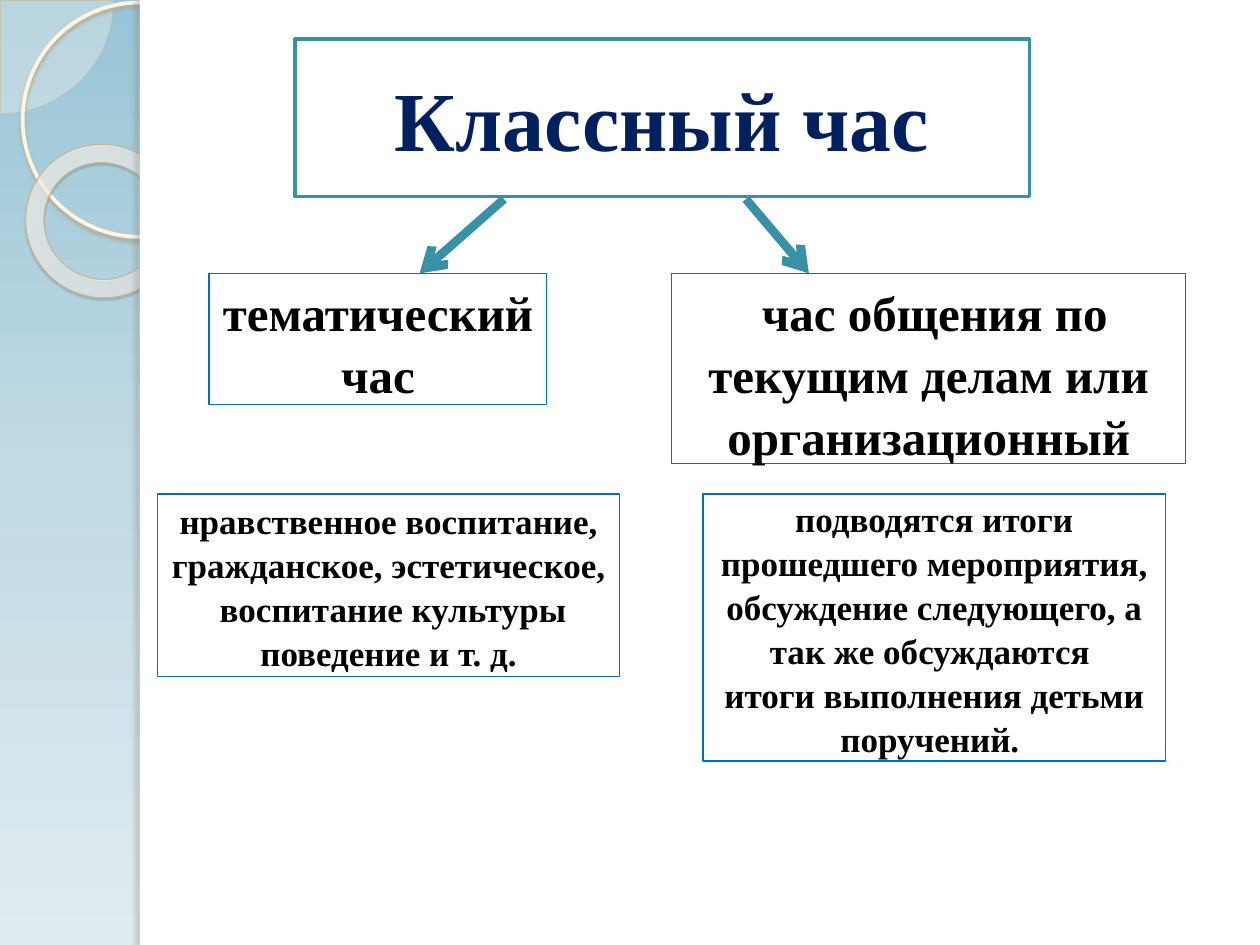
from lxml import etree
from pptx import Presentation
from pptx import util as u
from pptx.dml.color import RGBColor
from pptx.enum import shapes, text
from pptx.oxml import parse_xml
from pptx.oxml.ns import qn

NS = 'xmlns:a="http://schemas.openxmlformats.org/drawingml/2006/main"'
FONT = "Times New Roman"
COLORS = {
    "teal": "3891A7", "navy": "002060", "blue": "0070C0", "black": "000000",
    "white": "FFFFFF", "cream": "FEFAF4", "ring": "FFF5DE",
    "pie line": "D3C39F", "donut line": "C7B893",
}
BACKGROUND_STOPS = [(0, "98C5D6", 100), (50, "C1DAE4", 100), (100, "E1ECF1", 100)]
DONUT_STOPS = [(0, "FFFCF6", 70), (70, "FFFEFB", 55), (100, "F0D28E", 60)]
SIDEBAR = 1.11
KINDS = shapes.MSO_SHAPE


def rgb(name):
    return RGBColor.from_string(COLORS[name])


def gradient(stops, direction):
    """Return a gradient fill; each stop is position, colour, opacity in percent."""
    items = "".join(
        f'<a:gs pos="{position * 1000}"><a:srgbClr val="{color}">'
        f'<a:alpha val="{alpha * 1000}"/></a:srgbClr></a:gs>'
        for position, color, alpha in stops)
    return parse_xml(f'<a:gradFill {NS} rotWithShape="1"><a:gsLst>{items}</a:gsLst>'
                     f'{direction}</a:gradFill>')


def set_gradient(fill, parent, stops, direction):
    fill.gradient()
    old = next(parent.iter(qn("a:gradFill")))
    old.getparent().replace(old, gradient(stops, direction))


def set_shadow(shape, color, alpha, blur, distance, angle):
    effects = shape._element.spPr.find(qn("a:effectLst"))
    effects.append(parse_xml(
        f'<a:outerShdw {NS} blurRad="{u.Pt(blur)}" dist="{u.Pt(distance)}" '
        f'dir="{angle * 60000}" algn="tl" rotWithShape="0"><a:srgbClr val="{color}">'
        f'<a:alpha val="{alpha * 1000}"/></a:srgbClr></a:outerShdw>'))


def set_line(shape, color, width):
    shape.line.color.rgb = rgb(color)
    shape.line.width = u.Pt(width)


def add_figure(slide, kind, box, fill=None, line=None, shadow=None):
    shape = slide.shapes.add_shape(kind, *map(u.Inches, box))
    shape.shadow.inherit = False
    if fill:
        shape.fill.solid()
        shape.fill.fore_color.rgb = rgb(fill)
    else:
        shape.fill.background()
    if line:
        set_line(shape, *line)
    else:
        shape.line.fill.background()
    if shadow:
        set_shadow(shape, *shadow)
    return shape


def write(shape, paragraphs, size, color, anchor, spacing):
    frame = shape.text_frame
    frame.word_wrap = True
    frame.vertical_anchor = anchor
    frame.text = "\n".join(paragraphs)
    for paragraph in frame.paragraphs:
        paragraph.alignment = text.PP_ALIGN.CENTER
        paragraph.line_spacing = spacing
        for run in paragraph.runs:
            run.font.name = FONT
            run.font.size = u.Pt(size)
            run.font.bold = True
            run.font.color.rgb = rgb(color)


def add_box(slide, box, paragraphs, size, anchor=text.MSO_ANCHOR.TOP):
    shape = slide.shapes.add_textbox(*map(u.Inches, box))
    set_line(shape, "blue", 0.75)
    write(shape, paragraphs, size, "black", anchor, 1.05)


def add_arrow(slide, start, end):
    arrow = slide.shapes.add_connector(
        shapes.MSO_CONNECTOR.STRAIGHT, *map(u.Inches, (*start, *end)))
    set_line(arrow, "teal", 5)
    etree.SubElement(arrow.line._get_or_add_ln(), qn("a:tailEnd"), type="arrow")
    etree.SubElement(arrow._element.spPr, qn("a:effectLst"))


def add_sidebar(slide):
    fill = slide.background.fill
    set_gradient(fill, slide._element, BACKGROUND_STOPS, '<a:lin ang="5400000" scaled="0"/>')

    # Quarter disc in the corner
    pie = add_figure(slide, KINDS.PIE, (-0.89, -0.89, 1.79, 1.79), "cream", ("pie line", 0.25))
    pie.adjustments[0], pie.adjustments[1] = 0, 54
    color = pie._element.spPr.find(qn("a:solidFill"))[0]
    etree.SubElement(color, qn("a:alpha"), val="33000")

    # Rings
    add_figure(slide, KINDS.OVAL, (0.18, 0.02, 1.86, 1.86), line=("ring", 2.15),
               shadow=("B0A68F", 85, 2, 2, 90))
    donut = add_figure(slide, KINDS.DONUT, (0.2, 1.15, 1.23, 1.21),
                       line=("donut line", 0.58), shadow=("5A5444", 35, 1, 1.2, 75))
    donut.rotation = 38.6
    donut.adjustments[0] = 0.12
    set_gradient(donut.fill, donut._element, DONUT_STOPS,
                 '<a:path path="circle"><a:fillToRect l="-408000" t="-50000" '
                 'r="508000" b="150000"/></a:path>')

    # White page and its shaded edge
    add_figure(slide, KINDS.RECTANGLE, (SIDEBAR, 0, 10 - SIDEBAR, 7.5), "white")
    add_figure(slide, KINDS.RECTANGLE, (SIDEBAR, 0, 0.08, 7.5), "white",
               shadow=("736F63", 25, 3, 3, 180))


def add_title(slide, box, words):
    title = slide.shapes.title
    slide.shapes._spTree.append(title._element)  # above the page
    title.left, title.top, title.width, title.height = map(u.Inches, box)
    title.fill.solid()
    title.fill.fore_color.rgb = rgb("white")
    set_line(title, "teal", 2)
    write(title, [words], 48, "navy", text.MSO_ANCHOR.MIDDLE, 1)


def main():
    presentation = Presentation()
    presentation.slide_width, presentation.slide_height = u.Inches(10), u.Inches(7.5)
    slide = presentation.slides.add_slide(presentation.slide_layouts[5])
    add_sidebar(slide)
    add_title(slide, (2.34, 0.31, 5.83, 1.25), "Классный час")

    # Two kinds of class hour
    kinds_top, details_top, details_width = 2.17, 3.92, 3.67
    add_box(slide, (1.66, kinds_top, 2.68, 1.04), ["тематический час"], 28)
    add_box(slide, (5.33, kinds_top, 4.08, 1.51),
            [" час общения по текущим делам или организационный"], 28)

    # What each of them covers
    middle = text.MSO_ANCHOR.MIDDLE
    add_box(slide, (1.25, details_top, details_width, 1.45),
            ["нравственное воспитание, гражданское, эстетическое,",
             " воспитание культуры поведение и т. д."], 20, middle)
    add_box(slide, (5.58, details_top, details_width, 2.12),
            ["подводятся итоги прошедшего мероприятия, обсуждение следующего, "
             "а так же обсуждаются ",
             "итоги выполнения детьми поручений. "], 20, middle)

    # Arrows from the title to the kinds
    for start, end in ((4, 3.33), (5.92, 6.42)):
        add_arrow(slide, (start, 1.58), (end, kinds_top))

    presentation.save("out.pptx")


if __name__ == "__main__":
    main()
